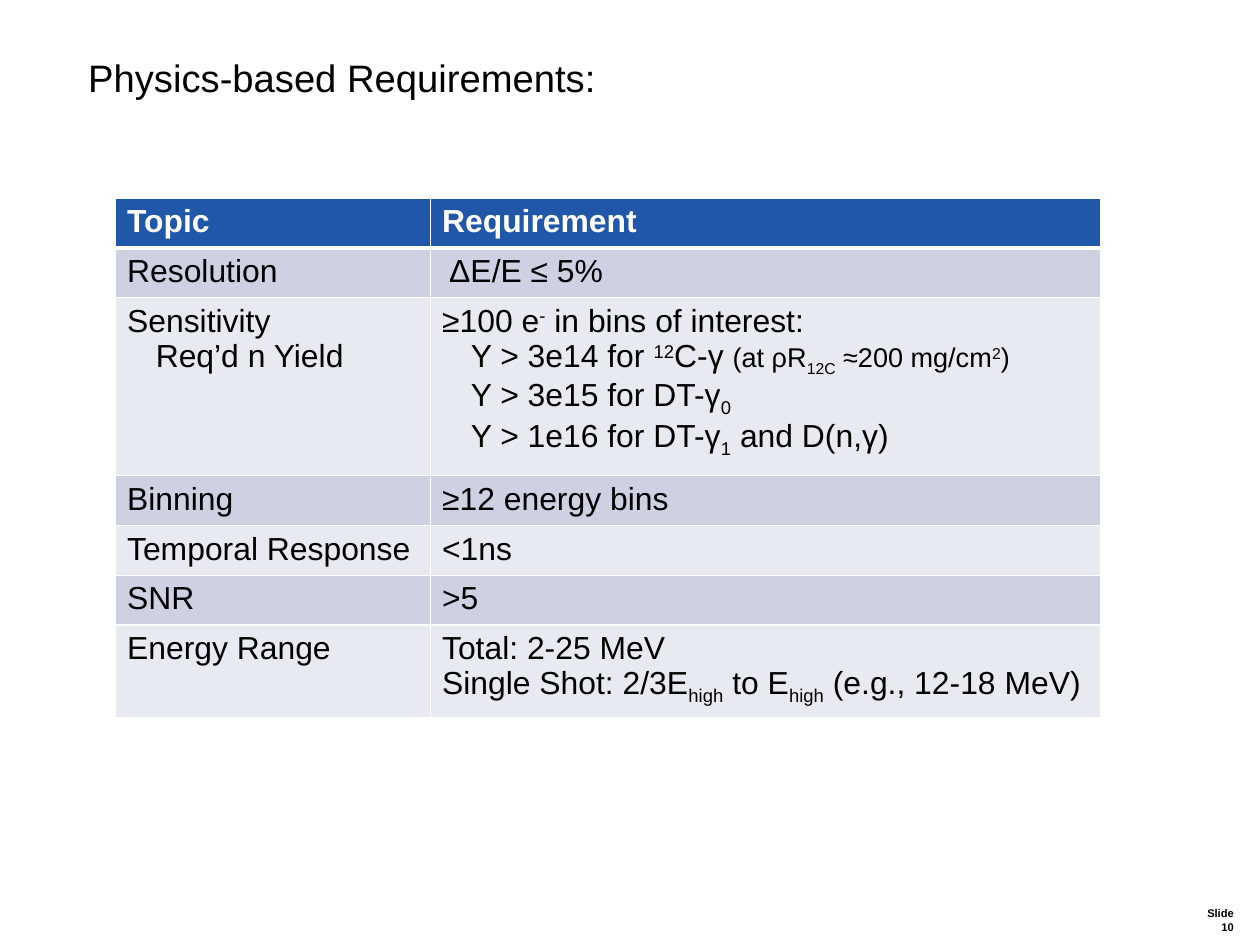
from lxml import etree
from pptx import Presentation
from pptx.dml.color import RGBColor
from pptx.enum.text import MSO_ANCHOR, MSO_AUTO_SIZE, PP_ALIGN
from pptx.oxml.ns import qn
from pptx.util import Inches, Pt

TOP, BOTTOM = MSO_ANCHOR.TOP, MSO_ANCHOR.BOTTOM
LEFT, RIGHT = PP_ALIGN.LEFT, PP_ALIGN.RIGHT
NO_FIT = MSO_AUTO_SIZE.NONE

BLACK = RGBColor(0x00, 0x00, 0x00)
WHITE = RGBColor(0xFF, 0xFF, 0xFF)
HEADER_BLUE = RGBColor(0x21, 0x57, 0xA8)
BAND_DARK = RGBColor(0xCD, 0xD1, 0xE1)
BAND_LIGHT = RGBColor(0xE8, 0xEA, 0xF1)

FONT = "Arial"
TITLE_SIZE, TABLE_SIZE, NOTE_SIZE, NUMBER_SIZE = 24, 20, 17, 7
SUPER, SUB = 30, -25
INDENT = 0.25
COLUMNS = (2.75, 5.85)
ROW = 0.43
ROWS = (ROW, ROW, 1.43, ROW, ROW, ROW, 0.77)


def plain(*parts, indent=0, size=TABLE_SIZE):
    spans = [part if isinstance(part, tuple) else (part, 0, size) for part in parts]
    return indent, spans


def sup(text, size=TABLE_SIZE):
    return text, SUPER, size


def sub(text, size=TABLE_SIZE):
    return text, SUB, size


def note(text):
    return text, 0, NOTE_SIZE


REQUIREMENTS = [
    ([plain("Topic")], [plain("Requirement")]),
    ([plain("Resolution")], [plain(" ΔE/E ≤ 5%")]),
    (
        [plain("Sensitivity"), plain("Req’d n Yield", indent=INDENT)],
        [
            plain("≥100 e", sup("-"), " in bins of interest:"),
            plain("Y > 3e14 for ", sup("12"), "C-γ ", note("(at ρR"),
                  sub("12C", NOTE_SIZE), note(" ≈200 mg/cm"),
                  sup("2", NOTE_SIZE), note(")"), indent=INDENT),
            plain("Y > 3e15 for DT-γ", sub("0"), indent=INDENT),
            plain("Y > 1e16 for DT-γ", sub("1"), " and D(n,γ)", indent=INDENT),
        ],
    ),
    ([plain("Binning")], [plain("≥12 energy bins")]),
    ([plain("Temporal Response")], [plain("<1ns")]),
    ([plain("SNR")], [plain(">5")]),
    (
        [plain("Energy Range")],
        [
            plain("Total: 2-25 MeV"),
            plain("Single Shot: 2/3E", sub("high"), " to E", sub("high"),
                  " (e.g., 12-18 MeV)"),
        ],
    ),
]


def add_span(para, text, size, color=BLACK, bold=False, baseline=0):
    span = para.add_run()
    span.text = text
    span.font.name = FONT
    span.font.size = Pt(size)
    span.font.bold = bold
    span.font.color.rgb = color
    if baseline:
        span.font._element.set("baseline", str(baseline * 1000))


def place(box, left, top, width, height):
    box.left, box.top = Inches(left), Inches(top)
    box.width, box.height = Inches(width), Inches(height)


def add_title(page, text):
    title = page.shapes.title
    place(title, 0.67, 0.42, 8.9, 0.78)
    frame = title.text_frame
    frame.auto_size = NO_FIT
    frame.vertical_anchor = TOP
    para = frame.paragraphs[0]
    para.alignment = LEFT
    add_span(para, text, TITLE_SIZE)


def add_slide_label(page, text):
    box = page.shapes.add_textbox(0, 0, 0, 0)
    place(box, 10.52, 7.91, 0.25, 0.24)
    frame = box.text_frame
    frame.word_wrap = True
    frame.vertical_anchor = BOTTOM
    frame.margin_left = frame.margin_right = 0
    frame.margin_top = frame.margin_bottom = 0
    para = frame.paragraphs[0]
    para.alignment = RIGHT
    add_span(para, text, NUMBER_SIZE, bold=True)


def set_borders(cell, top, bottom):
    properties = cell._tc.get_or_add_tcPr()
    sides = (("a:lnL", 1), ("a:lnR", 1), ("a:lnT", top), ("a:lnB", bottom))
    for place_in_order, (side, points) in enumerate(sides):
        line = etree.Element(qn(side), w=str(Pt(points)))
        fill = etree.SubElement(line, qn("a:solidFill"))
        etree.SubElement(fill, qn("a:srgbClr"), val=str(WHITE))
        properties.insert(place_in_order, line)


def fill_cell(cell, paragraphs, fill, color, bold):
    cell.fill.solid()
    cell.fill.fore_color.rgb = fill
    frame = cell.text_frame
    for index, (indent, spans) in enumerate(paragraphs):
        para = frame.paragraphs[0] if index == 0 else frame.add_paragraph()
        if indent:
            para._p.get_or_add_pPr().set("marL", str(Inches(indent)))
        for text, baseline, size in spans:
            add_span(para, text, size, color, bold, baseline)


def add_requirements(page):
    table = page.shapes.add_table(
        len(ROWS), len(COLUMNS), Inches(1.01), Inches(1.73),
        Inches(sum(COLUMNS)), Inches(sum(ROWS))).table
    for column, width in zip(table.columns, COLUMNS):
        column.width = Inches(width)
    for index, (height, contents) in enumerate(zip(ROWS, REQUIREMENTS)):
        table.rows[index].height = Inches(height)
        header = index == 0
        band = BAND_DARK if index % 2 else BAND_LIGHT
        for column, paragraphs in enumerate(contents):
            cell = table.cell(index, column)
            fill_cell(cell, paragraphs, HEADER_BLUE if header else band,
                      WHITE if header else BLACK, header)
            set_borders(cell, 3 if index == 1 else 1, 3 if header else 1)


def main():
    deck = Presentation()
    deck.slide_width, deck.slide_height = Inches(11), Inches(8.25)
    page = deck.slides.add_slide(deck.slide_layouts[5])
    add_slide_label(page, "Slide 10")
    add_title(page, "Physics-based Requirements:")
    add_requirements(page)
    deck.save("out.pptx")


if __name__ == "__main__":
    main()
